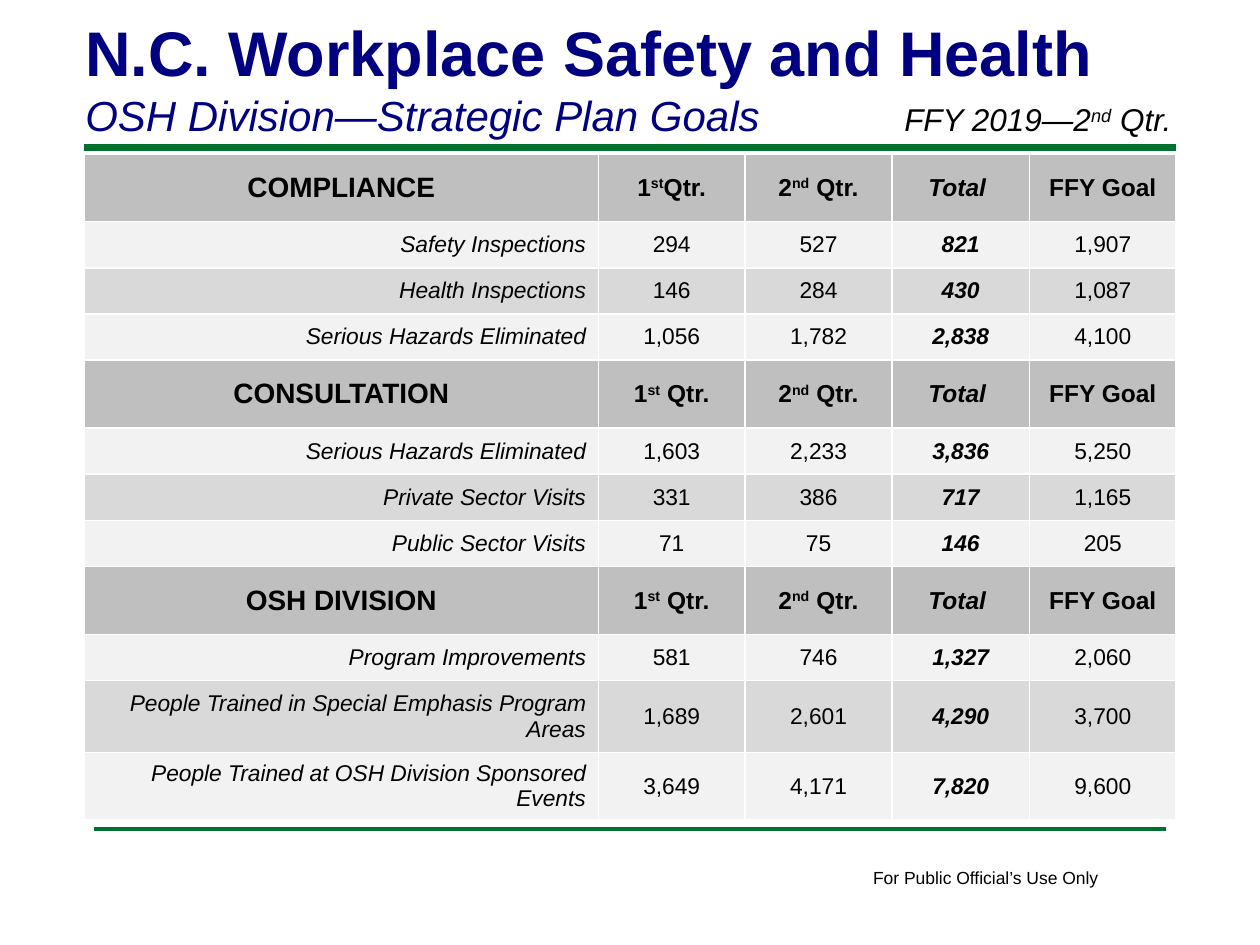
from lxml import etree
from pptx import Presentation
from pptx import util as u
from pptx.dml.color import RGBColor
from pptx.enum import shapes, text
from pptx.oxml import ns

GREEN, NAVY, BLACK, WHITE = "007030", "000080", "000000", "FFFFFF"
HEADING_FILL, BAND_FILLS = "BFBFBF", ("F2F2F2", "D9D9D9")
colour = RGBColor.from_string


def write(paragraph, wording, hue=BLACK, **formats):
    """Add wording to a paragraph; parts between ^ marks are superscript."""
    for part, piece in enumerate(wording.split("^")):
        run = paragraph.add_run()
        run.text = piece
        run.font.color.rgb = colour(hue)
        for name, value in {"name": "Arial", **formats}.items():
            setattr(run.font, name, value)
        if part % 2:
            run.font._element.set("baseline", "30000")


deck = Presentation()
deck.slide_width, deck.slide_height = u.Cm(25.4), u.Cm(19.05)
slide = deck.slides.add_slide(deck.slide_layouts[6])

# Green rules above and below the table
for left, right, y, weight in ((1.7, 23.7, 2.97, 4), (1.9, 23.5, 16.71, 2)):
    rule = slide.shapes.add_connector(
        shapes.MSO_CONNECTOR.STRAIGHT, u.Cm(left), u.Cm(y), u.Cm(right), u.Cm(y))
    rule.line.color.rgb = colour(GREEN)
    rule.line.width = u.Pt(weight)
    etree.SubElement(rule._element.spPr, ns.qn("a:effectLst"))

# Title, reporting period and footer: place, wrapping, lines
captions = [
    ((1.47, 0.15, 20.96, 2.82), True, [
        ("N.C. Workplace Safety and Health", NAVY, {"size": u.Pt(36), "bold": True}),
        ("OSH Division—Strategic Plan Goals", NAVY, {"size": u.Pt(24), "italic": True})]),
    ((17.98, 1.9, 6.35, 1.02), True, [
        ("FFY 2019—2^nd^ Qtr.", BLACK, {"size": u.Pt(18), "italic": True})]),
    ((17.35, 17.35, 5.1, 0.69), False, [
        ("For Public Official’s Use Only", BLACK, {"size": u.Pt(10)})]),
]
for place, wraps, lines in captions:
    frame = slide.shapes.add_textbox(*map(u.Cm, place)).text_frame
    frame.word_wrap = wraps
    for number, (wording, hue, formats) in enumerate(lines):
        paragraph = frame.add_paragraph() if number else frame.paragraphs[0]
        write(paragraph, wording, hue, **formats)

# Goals by section: first quarter heading, then rows of figures
sections = [
    ("COMPLIANCE", "1^st^Qtr.", [
        ("Safety Inspections", "294", "527", "821", "1,907"),
        ("Health Inspections", "146", "284", "430", "1,087"),
        ("Serious Hazards Eliminated", "1,056", "1,782", "2,838", "4,100")]),
    ("CONSULTATION", "1^st^ Qtr.", [
        ("Serious Hazards Eliminated", "1,603", "2,233", "3,836", "5,250"),
        ("Private Sector Visits", "331", "386", "717", "1,165"),
        ("Public Sector Visits", "71", "75", "146", "205")]),
    ("OSH DIVISION", "1^st^ Qtr.", [
        ("Program Improvements", "581", "746", "1,327", "2,060"),
        ("People Trained in Special Emphasis Program Areas",
         "1,689", "2,601", "4,290", "3,700"),
        ("People Trained at OSH Division Sponsored Events",
         "3,649", "4,171", "7,820", "9,600")]),
]
goal_rows = []
for section, first_quarter, measures in sections:
    goal_rows.append(((section, first_quarter, "2^nd^ Qtr.", "Total ", "FFY Goal"),
                      HEADING_FILL))
    goal_rows += [(measure, BAND_FILLS[i % 2]) for i, measure in enumerate(measures)]

# Table grid
column_widths = [10.36, 2.96, 2.96, 2.77, 2.96]
row_heights = ([1.37] + [0.93] * 3) * 2 + [1.37, 0.93, 1.45, 1.33]
goals = slide.shapes.add_table(
    len(row_heights), len(column_widths), u.Cm(1.7), u.Cm(3.1),
    u.Cm(sum(column_widths)), u.Cm(sum(row_heights))).table
for column, width in zip(goals.columns, column_widths):
    column.width = u.Cm(width)
for row, height in zip(goals.rows, row_heights):
    row.height = u.Cm(height)

# Table cells, with thin white borders
for row, (entries, fill) in zip(goals.rows, goal_rows):
    heading = fill == HEADING_FILL
    for position, (cell, entry) in enumerate(zip(row.cells, entries)):
        is_label, is_total = position == 0, position == 3
        cell.vertical_anchor = text.MSO_ANCHOR.MIDDLE
        paragraph = cell.text_frame.paragraphs[0]
        paragraph.alignment = (text.PP_ALIGN.RIGHT if is_label and not heading
                               else text.PP_ALIGN.CENTER)
        size = (16 if is_label else 14) if heading else 13
        write(paragraph, entry, size=u.Pt(size), bold=heading or is_total,
              italic=is_total or (is_label and not heading))
        borders = cell._tc.get_or_add_tcPr()
        for side in ("a:lnL", "a:lnR", "a:lnT", "a:lnB"):
            edge = etree.SubElement(borders, ns.qn(side), w=str(u.Pt(1)))
            paint = etree.SubElement(edge, ns.qn("a:solidFill"))
            etree.SubElement(paint, ns.qn("a:srgbClr"), val=WHITE)
        cell.fill.solid()
        cell.fill.fore_color.rgb = colour(fill)

deck.save("out.pptx")
